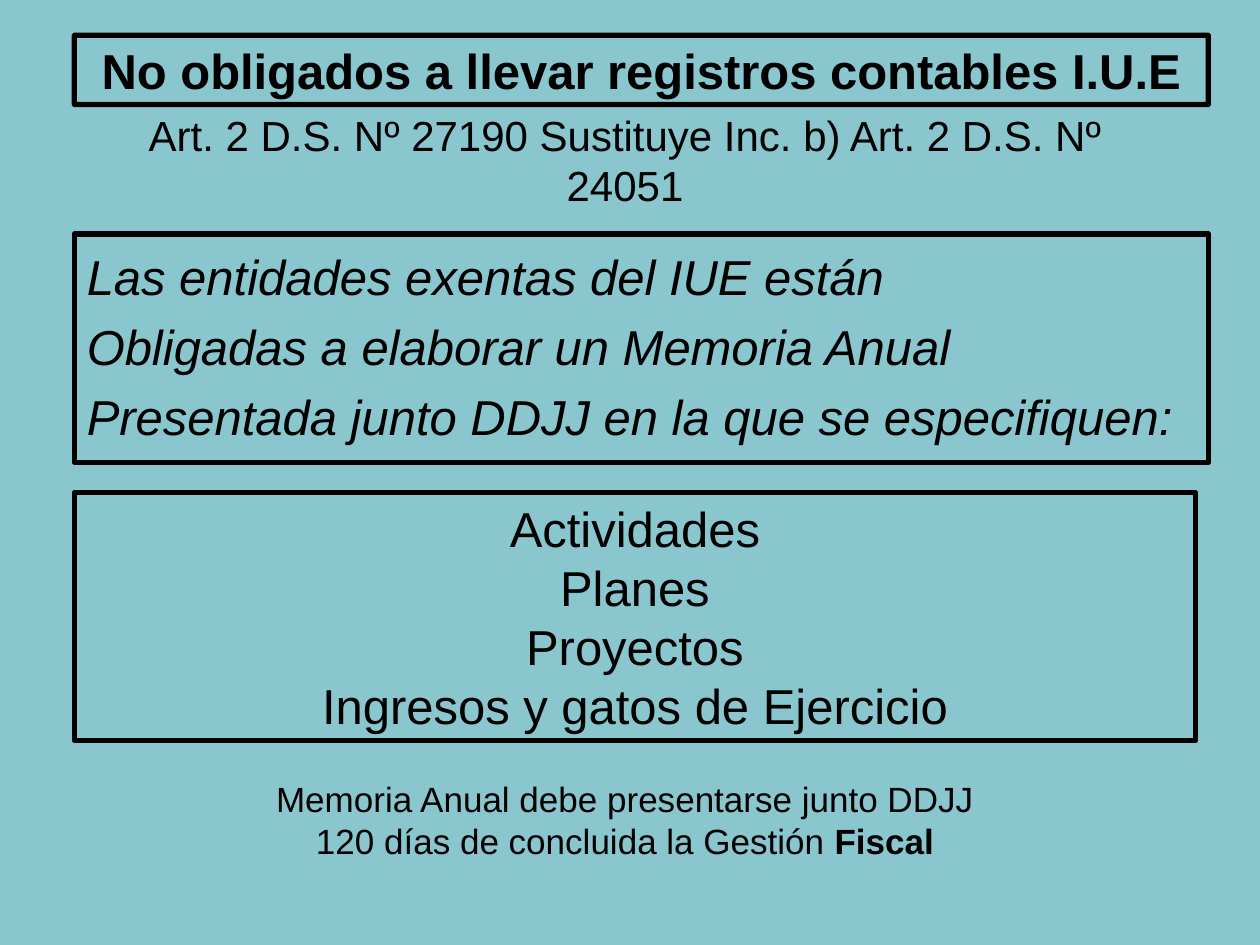
from dataclasses import dataclass

from pptx import Presentation
from pptx import util as u
from pptx.dml.color import RGBColor
from pptx.enum import shapes, text


@dataclass(frozen=True)
class Theme:
    font: str = "Arial"
    background: RGBColor = RGBColor(0x8A, 0xC6, 0xCD)
    ink: RGBColor = RGBColor(0, 0, 0)
    large: int = 28
    medium: int = 24
    small: int = 20
    border: int = 3


THEME = Theme()
LEFT = 1.5
FULL_WIDTH = 22.86


def add_frame(page, left, top, width, height, kind=shapes.MSO_SHAPE.RECTANGLE):
    """Add an unfilled outlined shape, measured in centimetres."""
    frame = page.shapes.add_shape(
        kind, u.Cm(left), u.Cm(top), u.Cm(width), u.Cm(height))
    frame.shadow.inherit = False
    frame.fill.background()
    frame.line.color.rgb = THEME.ink
    frame.line.width = u.Pt(THEME.border)
    return frame


def add_label(page, left, top, width, height):
    return page.shapes.add_textbox(
        u.Cm(left), u.Cm(top), u.Cm(width), u.Cm(height))


def write(box, lines, size, bold=False, italic=False, wrap=False, gap=0,
          align=text.PP_ALIGN.CENTER, anchor=text.MSO_ANCHOR.MIDDLE):
    """Fill a box; a line is a string or a list of (string, bold) spans."""
    frame = box.text_frame
    frame.word_wrap = wrap
    frame.vertical_anchor = anchor
    for index, line in enumerate(lines):
        para = frame.add_paragraph() if index else frame.paragraphs[0]
        para.alignment = align
        para.space_before = u.Pt(gap if index else 0)
        spans = [(line, bold)] if isinstance(line, str) else line
        for words, is_bold in spans:
            span = para.add_run()
            span.text = words
            span.font.name = THEME.font
            span.font.size = u.Pt(size)
            span.font.color.rgb = THEME.ink
            span.font.bold = is_bold
            span.font.italic = italic


def main():
    deck = Presentation()
    deck.slide_width, deck.slide_height = u.Cm(25.4), u.Cm(19.05)
    page = deck.slides.add_slide(deck.slide_layouts[6])
    page.background.fill.solid()
    page.background.fill.fore_color.rgb = THEME.background

    exempt = add_frame(page, LEFT, 4.72, FULL_WIDTH, 4.6)
    exempt.text_frame.margin_top = u.Cm(0.24)
    write(exempt,
          ["Las entidades exentas del IUE están",
           "Obligadas a elaborar un Memoria Anual",
           "Presentada junto DDJJ en la que se especifiquen:"],
          THEME.large, italic=True, wrap=True, gap=6.5,
          align=text.PP_ALIGN.LEFT, anchor=text.MSO_ANCHOR.TOP)

    title = add_frame(page, LEFT, 0.71, FULL_WIDTH, 1.4,
                      shapes.MSO_SHAPE.ROUNDED_RECTANGLE)
    title.adjustments[0] = 0.01
    write(title, ["No obligados a llevar registros contables I.U.E"],
          THEME.large, bold=True)

    decree = add_label(page, 1.7, 2.72, 21.8, 1)
    write(decree, ["Art. 2 D.S. Nº 27190 Sustituye Inc. b) Art. 2 D.S. Nº 24051"],
          THEME.medium)

    contents = add_frame(page, LEFT, 9.93, 22.6, 5)
    write(contents,
          ["Actividades", "Planes", "Proyectos", "Ingresos y gatos de Ejercicio"],
          THEME.large)

    deadline = add_label(page, LEFT, 15.52, 22.2, 2)
    write(deadline,
          ["Memoria Anual debe presentarse junto DDJJ",
           [("120 días de concluida la Gestión ", False), ("Fiscal", True)]],
          THEME.small)

    deck.save("out.pptx")


if __name__ == "__main__":
    main()
